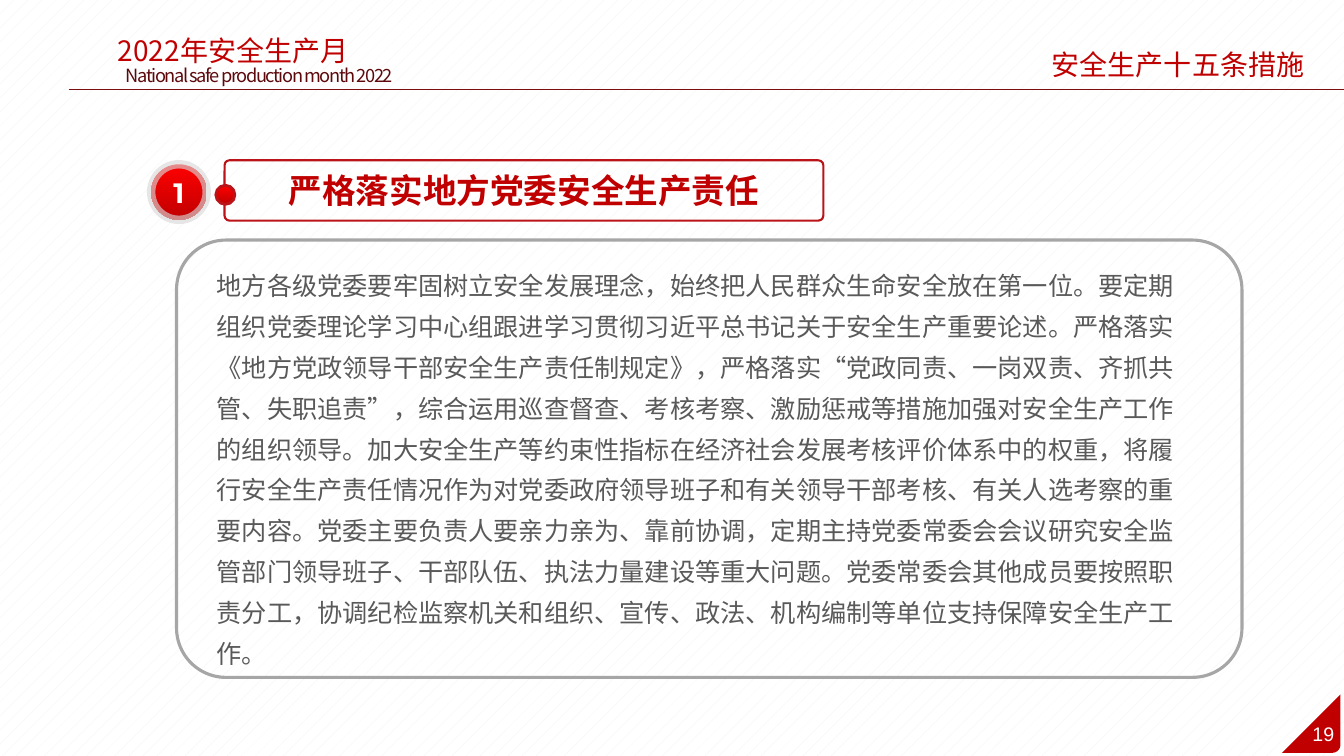
"""Build the slide on the first of the fifteen work safety measures."""
from dataclasses import dataclass
from math import cos, pi, sin
from typing import Optional

from lxml.etree import SubElement
from pptx import Presentation
from pptx.dml.color import RGBColor
from pptx.dml.fill import FillFormat
from pptx.enum.dml import MSO_PATTERN
from pptx.enum.shapes import MSO_CONNECTOR, MSO_SHAPE
from pptx.enum.text import MSO_ANCHOR, MSO_AUTO_SIZE, PP_ALIGN
from pptx.oxml.ns import qn
from pptx.slide import Slide
from pptx.text.text import TextFrame
from pptx.util import Cm, Pt

WHITE = RGBColor(0xFF, 0xFF, 0xFF)
PALE_GRAY = RGBColor(0xF2, 0xF2, 0xF2)
RING_GRAY = RGBColor(0xD9, 0xD9, 0xD9)
FRAME_GRAY = RGBColor(0xA6, 0xA6, 0xA6)
TEXT_GRAY = RGBColor(0x59, 0x59, 0x59)
BRIGHT_RED = RGBColor(0xFF, 0x00, 0x00)
RED = RGBColor(0xC0, 0x00, 0x00)
OUTLINE_RED = RGBColor(0xBA, 0x13, 0x18)
RULE_RED = RGBColor(0x7C, 0x0D, 0x10)
DARK_RED = RGBColor(0x5D, 0x09, 0x0C)
CHINESE_FONT = "Noto Sans CJK SC"

BODY = (
    "地方各级党委要牢固树立安全发展理念，始终把人民群众生命安全放在第一位。"
    "要定期组织党委理论学习中心组跟进学习贯彻习近平总书记关于安全生产重要论述。"
    "严格落实《地方党政领导干部安全生产责任制规定》，"
    "严格落实“党政同责、一岗双责、齐抓共管、失职追责”，"
    "综合运用巡查督查、考核考察、激励惩戒等措施加强对安全生产工作的组织领导。"
    "加大安全生产等约束性指标在经济社会发展考核评价体系中的权重，"
    "将履行安全生产责任情况作为对党委政府领导班子和有关领导干部考核、有关人选考察的重要内容。"
    "党委主要负责人要亲力亲为、靠前协调，"
    "定期主持党委常委会会议研究安全监管部门领导班子、干部队伍、执法力量建设等重大问题。"
    "党委常委会其他成员要按照职责分工，"
    "协调纪检监察机关和组织、宣传、政法、机构编制等单位支持保障安全生产工作。"
)


@dataclass
class Area:
    """Place and size in centimetres."""
    left: float
    top: float
    width: float
    height: float

    def lengths(self) -> tuple[Cm, Cm, Cm, Cm]:
        """Return the four values as lengths."""
        return Cm(self.left), Cm(self.top), Cm(self.width), Cm(self.height)


@dataclass
class Label:
    """One paragraph of text and its format."""
    text: str
    size: float
    color: RGBColor
    align: PP_ALIGN = PP_ALIGN.CENTER
    font: str = CHINESE_FONT
    bold: bool = False
    wrap: bool = True
    tracking: int = 0
    line_spacing: Optional[float] = None


@dataclass
class Figure:
    """A preset shape with an outline, and optionally a gradient and a label."""
    kind: MSO_SHAPE
    area: Area
    outline: RGBColor
    weight: float
    gradient: bool = False
    rounding: Optional[float] = None
    outline_alpha: Optional[int] = None
    label: Optional[Label] = None


TEXT_BOXES = [
    (Area(32.79, 18.06, 1.12, 0.86), Label("19", 14, WHITE, font="Arial", wrap=False)),
    (Area(1.52, 0.71, 8.71, 1.12), Label("2022年安全生产月", 20, RED)),
    (Area(2.79, 1.5, 7.49, 0.81),
     Label("National safe production month 2022", 13, DARK_RED, wrap=False, tracking=-100)),
    (Area(24.41, 1.07, 8.71, 1.12), Label("安全生产十五条措施", 20, RED, PP_ALIGN.RIGHT)),
    (Area(5.21, 6.43, 24.89, 10.64),
     Label(BODY, 18, TEXT_GRAY, PP_ALIGN.LEFT, line_spacing=1.35)),
]
FIGURES = [
    Figure(MSO_SHAPE.OVAL, Area(3.81, 4.14, 1.4, 1.4), RING_GRAY, 6, gradient=True,
           outline_alpha=63, label=Label("1", 20, WHITE, font="Montserrat", bold=True)),
    Figure(MSO_SHAPE.ROUNDED_RECTANGLE, Area(5.66, 4.04, 15.09, 1.52), OUTLINE_RED, 1.5,
           rounding=0.082,
           label=Label("严格落实地方党委安全生产责任", 24, RED, bold=True, wrap=False)),
    Figure(MSO_SHAPE.FLOWCHART_CONNECTOR, Area(5.44, 4.67, 0.48, 0.48), OUTLINE_RED, 2,
           gradient=True),
    Figure(MSO_SHAPE.ROUNDED_RECTANGLE, Area(4.45, 6.05, 26.85, 11.02), FRAME_GRAY, 2.25,
           rounding=0.113),
]


def write_label(frame: TextFrame, label: Label) -> None:
    """Write the label into the frame as one run."""
    frame.word_wrap = label.wrap
    para = frame.paragraphs[0]
    para.alignment = label.align
    if label.line_spacing:
        para.line_spacing = label.line_spacing
    span = para.add_run()
    span.text = label.text
    span.font.name = label.font
    span.font.size = Pt(label.size)
    span.font.bold = label.bold
    span.font.color.rgb = label.color
    properties = span.font._element
    SubElement(properties, qn("a:ea")).set("typeface", label.font)
    if label.tracking:
        properties.set("spc", str(label.tracking))


def add_text(page: Slide, area: Area, label: Label) -> None:
    """Add a text box that grows with its text."""
    box = page.shapes.add_textbox(*area.lengths())
    write_label(box.text_frame, label)
    box.text_frame.auto_size = MSO_AUTO_SIZE.SHAPE_TO_FIT_TEXT


def fill_gradient(fill: FillFormat) -> None:
    """Fill from bright red at the top to red at the bottom."""
    fill.gradient()
    fill.gradient_angle = 270
    for stop, color, position in zip(fill.gradient_stops, (BRIGHT_RED, RED), (0, 1)):
        stop.color.rgb = color
        stop.position = position


def add_figure(page: Slide, figure: Figure) -> None:
    """Add a preset shape with its outline and label."""
    shape = page.shapes.add_shape(figure.kind, *figure.area.lengths())
    shape.shadow.inherit = False
    if figure.rounding is not None:
        shape.adjustments[0] = figure.rounding
    if figure.gradient:
        fill_gradient(shape.fill)
    else:
        shape.fill.background()
    shape.line.color.rgb = figure.outline
    shape.line.width = Pt(figure.weight)
    if figure.outline_alpha is not None:
        color = shape.line._ln.find(f".//{qn('a:srgbClr')}")
        SubElement(color, qn("a:alpha")).set("val", str(figure.outline_alpha * 1000))
    if figure.label:
        shape.text_frame.vertical_anchor = MSO_ANCHOR.MIDDLE
        write_label(shape.text_frame, figure.label)


def add_header_rule(page: Slide) -> None:
    """Add the thin rule under the header."""
    rule = page.shapes.add_connector(
        MSO_CONNECTOR.STRAIGHT, Cm(1.73), Cm(2.26), Cm(33.87), Cm(2.26))
    rule.line.color.rgb = RULE_RED
    rule.line.width = Pt(0.75)
    SubElement(rule._element.spPr, qn("a:effectLst"))


def add_page_corner(page: Slide) -> None:
    """Add the red triangle with one rounded corner behind the page number."""
    left, top, right, bottom, radius, steps = 32.31, 17.5, 33.78, 18.97, 0.2, 8
    angles = [pi / 2 * step / steps for step in range(steps + 1)]
    arc = [(Cm(right - radius + radius * cos(angle)), Cm(bottom - radius + radius * sin(angle)))
           for angle in angles]
    builder = page.shapes.build_freeform(Cm(right), Cm(top))
    builder.add_line_segments([*arc, (Cm(left), Cm(bottom))], close=True)
    corner = builder.convert_to_shape()
    corner.shadow.inherit = False
    corner.fill.solid()
    corner.fill.fore_color.rgb = RED
    corner.line.fill.background()


def main() -> None:
    """Build and save the deck."""
    deck = Presentation()
    deck.slide_width, deck.slide_height = Cm(33.87), Cm(19.05)
    page = deck.slides.add_slide(deck.slide_layouts[6])
    backdrop = page.background.fill
    backdrop.patterned()
    backdrop.pattern = MSO_PATTERN.PERCENT_5
    backdrop.fore_color.rgb = PALE_GRAY
    backdrop.back_color.rgb = WHITE
    add_header_rule(page)
    add_page_corner(page)
    for area, label in TEXT_BOXES:
        add_text(page, area, label)
    for figure in FIGURES:
        add_figure(page, figure)
    deck.save("out.pptx")


if __name__ == "__main__":
    main()
